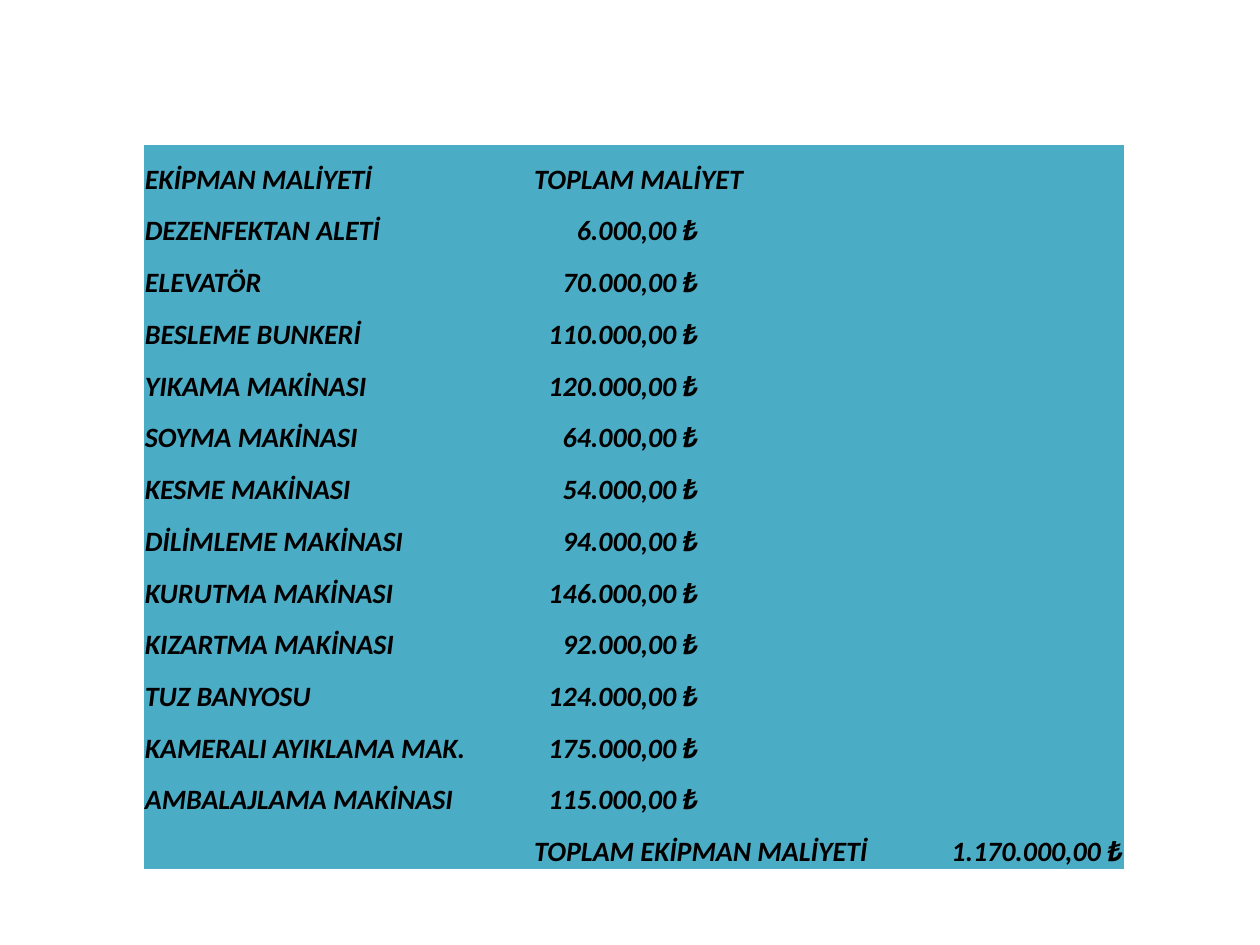
from pptx import Presentation
from pptx.dml.color import RGBColor
from pptx.enum.text import MSO_ANCHOR, PP_ALIGN
from pptx.oxml.ns import qn
from pptx.util import Inches, Pt

PLAIN = "{2D5ABB26-0587-4C30-8999-92F81FD0307C}"  # no style, no grid
TEAL, BLACK = "4BACC6", "000000"
FONT = {"name": "Calibri", "size": Pt(16), "bold": True, "italic": True}
CELL = {
    "margin_left": Inches(0.01),
    "margin_right": Inches(0.01),
    "margin_top": Inches(0.01),
    "margin_bottom": 0,
    "vertical_anchor": MSO_ANCHOR.BOTTOM,
}
WIDTHS = [1.03, 1.03, 1.03, 1.32, 1.74, 1.63]

# name, columns the name spans, cost
COSTS = [
    ("DEZENFEKTAN ALETİ", 3, "6.000,00 ₺"),
    ("ELEVATÖR", 2, "70.000,00 ₺"),
    ("BESLEME BUNKERİ", 2, "110.000,00 ₺"),
    ("YIKAMA MAKİNASI", 2, "120.000,00 ₺"),
    ("SOYMA MAKİNASI", 2, "64.000,00 ₺"),
    ("KESME MAKİNASI", 2, "54.000,00 ₺"),
    ("DİLİMLEME MAKİNASI", 3, "94.000,00 ₺"),
    ("KURUTMA MAKİNASI", 3, "146.000,00 ₺"),
    ("KIZARTMA MAKİNASI", 3, "92.000,00 ₺"),
    ("TUZ BANYOSU", 2, "124.000,00 ₺"),
    ("KAMERALI AYIKLAMA MAK.", 3, "175.000,00 ₺"),
    ("AMBALAJLAMA MAKİNASI", 3, "115.000,00 ₺"),
]
LAST = len(COSTS) + 1


def color(code):
    return RGBColor.from_string(code)


def write(row, col, text, span=1, align=PP_ALIGN.LEFT):
    cell = table.cell(row, col)
    if span > 1:
        cell.merge(table.cell(row, col + span - 1))
    line = cell.text_frame.paragraphs[0]
    line.alignment = align
    run = line.add_run()
    run.text = text
    for key, value in FONT.items():
        setattr(run.font, key, value)
    run.font.color.rgb = color(BLACK)


deck = Presentation()
deck.slide_width, deck.slide_height = Inches(10), Inches(7.5)
slide = deck.slides.add_slide(deck.slide_layouts[6])

table = slide.shapes.add_table(
    LAST + 1, len(WIDTHS), Inches(1.14), Inches(1.15), Inches(7.8), Inches(5.75)
).table
table.first_row = table.horz_banding = False
table._tbl.tblPr.find(qn("a:tableStyleId")).text = PLAIN
for column, width in zip(table.columns, WIDTHS):
    column.width = Inches(width)

for cell in table.iter_cells():
    cell.fill.solid()
    cell.fill.fore_color.rgb = color(TEAL)
    for key, value in CELL.items():
        setattr(cell, key, value)

write(0, 0, "EKİPMAN MALİYETİ", 2)
write(0, 3, "TOPLAM MALİYET", 2)
for row, (name, span, cost) in enumerate(COSTS, 1):
    write(row, 0, name, span)
    write(row, 3, cost, align=PP_ALIGN.RIGHT)
write(LAST, 3, "TOPLAM EKİPMAN MALİYETİ", 2)
write(LAST, 5, "1.170.000,00 ₺", align=PP_ALIGN.RIGHT)

deck.save("out.pptx")
